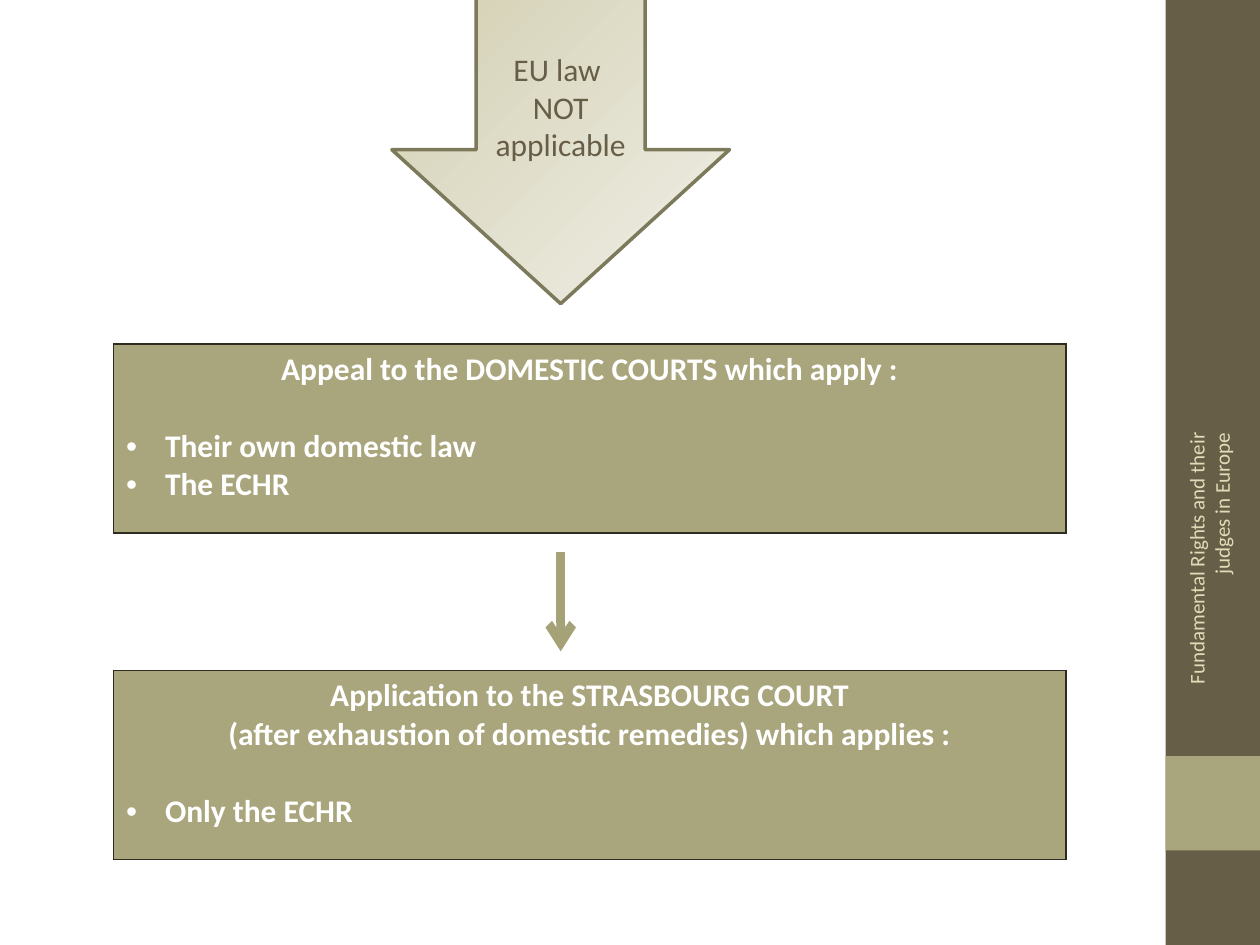
from lxml.etree import SubElement
from pptx import Presentation
from pptx.dml.color import RGBColor
from pptx.enum.shapes import MSO_CONNECTOR, MSO_SHAPE
from pptx.enum.text import MSO_ANCHOR, PP_ALIGN
from pptx.oxml.ns import qn
from pptx.util import Inches, Pt

COLUMNS, ROWS = 40, 30
DARK, OLIVE, CREAM = "675E47", "A9A57C", "DFDCB7"
AXIS = 17.8  # column on which both arrows are centred


def color(hex_code):
    return RGBColor.from_string(hex_code)


class FlowSlide:
    """Style and drawing methods; lengths are columns and rows of the grid."""

    font = "Calibri"
    size = 18
    line_height = 22
    indent = Inches(0.31)

    def __init__(self, presentation):
        self.slide = presentation.slides.add_slide(presentation.slide_layouts[6])
        self.shapes = self.slide.shapes
        self.column = presentation.slide_width / COLUMNS
        self.row = presentation.slide_height / ROWS

    def place(self, left, top, width, height):
        return (round(left * self.column), round(top * self.row),
                round(width * self.column), round(height * self.row))

    def style(self, paragraph, hex_code, align, size=None, bold=False):
        paragraph.alignment = align
        for run in paragraph.runs:
            run.font.name = self.font
            run.font.size = Pt(size or self.size)
            run.font.bold = bold
            run.font.color.rgb = color(hex_code)

    def band(self, *area, fill):
        band = self.shapes.add_shape(MSO_SHAPE.RECTANGLE, *self.place(*area))
        band.shadow.inherit = False
        band.fill.solid()
        band.fill.fore_color.rgb = color(fill)
        band.line.fill.background()

    def block_arrow(self, *area, lines):
        arrow = self.shapes.add_shape(MSO_SHAPE.DOWN_ARROW, *self.place(*area))
        arrow.shadow.inherit = False
        arrow.adjustments[0], arrow.adjustments[1] = 0.5, 0.485
        arrow.fill.gradient()
        arrow.fill.gradient_angle = 315
        for stop, shade in zip(arrow.fill.gradient_stops, ("D2CFB1", "F0EFE7")):
            stop.color.rgb = color(shade)
        arrow.line.color.rgb = color("7D7A5C")
        arrow.line.width = Pt(2)
        arrow.text_frame.text = "\n".join(lines)
        arrow.text_frame.vertical_anchor = MSO_ANCHOR.MIDDLE
        for paragraph in arrow.text_frame.paragraphs:
            self.style(paragraph, DARK, PP_ALIGN.CENTER)

    def court_box(self, *area, heading, bullets):
        """One-cell table: centred heading lines above a bulleted list."""
        table = self.shapes.add_table(1, 1, *self.place(*area)).table
        cell = table.cell(0, 0)
        self.border(cell)
        cell.fill.solid()
        cell.fill.fore_color.rgb = color(OLIVE)
        cell.text_frame.text = "\n".join(heading + bullets)
        paragraphs = cell.text_frame.paragraphs
        first_bullet = len(heading)
        for paragraph in paragraphs[:first_bullet]:
            self.style(paragraph, "FFFFFF", PP_ALIGN.CENTER, bold=True)
        for paragraph in paragraphs[first_bullet:]:
            self.bullet(paragraph)
            self.style(paragraph, "FFFFFF", PP_ALIGN.LEFT, bold=True)
        paragraphs[first_bullet].space_before = Pt(self.line_height)

    def border(self, cell):
        properties = cell._tc.get_or_add_tcPr()
        for side in ("lnL", "lnR", "lnT", "lnB"):
            edge = SubElement(properties, qn(f"a:{side}"), w=str(Pt(1)))
            fill = SubElement(edge, qn("a:solidFill"))
            SubElement(fill, qn("a:srgbClr"), val="2F2B20")

    def bullet(self, paragraph):
        properties = paragraph._p.get_or_add_pPr()
        properties.set("marL", str(self.indent))
        properties.set("indent", str(-self.indent))
        SubElement(properties, qn("a:buFont"), typeface="Arial")
        SubElement(properties, qn("a:buChar"), char="•")

    def down_line(self, column, top, bottom):
        x, start, _, end = self.place(column, top, 0, bottom)
        line = self.shapes.add_connector(MSO_CONNECTOR.STRAIGHT, x, start, x, end)
        line.line.color.rgb = color("A6A278")
        line.line.width = Pt(5)
        SubElement(line.line._get_or_add_ln(), qn("a:tailEnd"), type="arrow")
        SubElement(line._element.spPr, qn("a:effectLst"))

    def side_title(self, *area, text):
        title = self.shapes.add_textbox(*self.place(*area))
        title.rotation = 270
        title.text_frame.word_wrap = True
        title.text_frame.vertical_anchor = MSO_ANCHOR.MIDDLE
        title.text_frame.text = text
        self.style(title.text_frame.paragraphs[0], CREAM, PP_ALIGN.RIGHT, size=12)


def main():
    presentation = Presentation()
    presentation.slide_width, presentation.slide_height = Inches(10), Inches(7.5)
    flow = FlowSlide(presentation)

    flow.band(37, 0, 3, ROWS, fill=DARK)
    flow.band(37, 24, 3, 3, fill=OLIVE)

    arrow_width = 10.72
    flow.block_arrow(AXIS - arrow_width / 2, -0.44, arrow_width, 10.08,
                     lines=["EU law ", "NOT applicable"])
    flow.court_box(3.6, 10.92, 30.24, 6,
                   heading=["Appeal to the DOMESTIC COURTS which apply :"],
                   bullets=["Their own domestic law", "The ECHR"])
    flow.down_line(AXIS, 17.52, 20.68)
    flow.court_box(3.6, 21.28, 30.24, 6,
                   heading=["Application to the STRASBOURG COURT",
                            "(after exhaustion of domestic remedies) which applies :"],
                   bullets=["Only the ECHR"])
    flow.side_title(33.2, 17.72, 10.36, 1.6,
                    text="Fundamental Rights and their judges in Europe")

    presentation.save("out.pptx")


if __name__ == "__main__":
    main()
